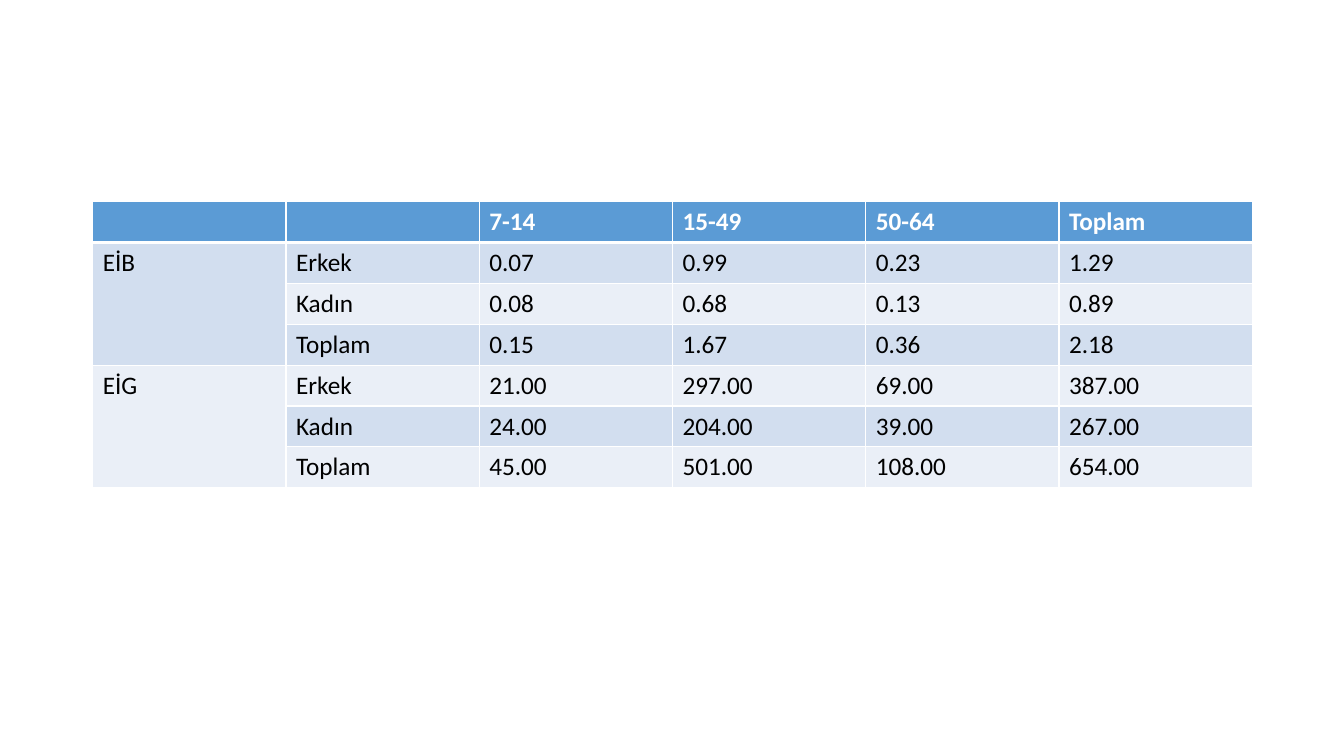
from dataclasses import dataclass

from lxml import etree
from pptx import Presentation
from pptx.dml.color import RGBColor
from pptx.oxml.ns import qn
from pptx.table import Table, _Cell
from pptx.util import Inches, Pt

COLORS = {
    "header": "5B9BD5",
    "dark_band": "D2DEEF",
    "light_band": "EAEFF7",
    "white": "FFFFFF",
    "black": "000000",
}
BLANK_LAYOUT = 6
THIN, THICK = 1, 3
HEADINGS = ("", "", "7-14", "15-49", "50-64", "Toplam")


@dataclass(frozen=True)
class Measure:
    name: str
    rows: tuple[tuple[str, ...], ...]


MEASURES = (
    Measure("EİB", (
        ("Erkek", "0.07", "0.99", "0.23", "1.29"),
        ("Kadın", "0.08", "0.68", "0.13", "0.89"),
        ("Toplam", "0.15", "1.67", "0.36", "2.18"),
    )),
    Measure("EİG", (
        ("Erkek", "21.00", "297.00", "69.00", "387.00"),
        ("Kadın", "24.00", "204.00", "39.00", "267.00"),
        ("Toplam", "45.00", "501.00", "108.00", "654.00"),
    )),
)


def write_text(cell: _Cell, text: str, *, color: str = "black",
               bold: bool = False, size: float = 18) -> None:
    paragraph = cell.text_frame.paragraphs[0]
    if not text:
        paragraph.font.size = Pt(size)
        return
    run = paragraph.add_run()
    run.text = text
    run.font.name = "Calibri"
    run.font.size = Pt(size)
    run.font.bold = bold
    run.font.color.rgb = RGBColor.from_string(COLORS[color])


def set_borders(cell: _Cell, top: float, bottom: float) -> None:
    """Add white borders; call before the fill, which must follow them in the XML."""
    properties = cell._tc.get_or_add_tcPr()
    widths = {"a:lnL": THIN, "a:lnR": THIN, "a:lnT": top, "a:lnB": bottom}
    for tag, width in widths.items():
        line = etree.SubElement(properties, qn(tag), w=str(int(Pt(width))))
        fill = etree.SubElement(line, qn("a:solidFill"))
        etree.SubElement(fill, qn("a:srgbClr"), val=COLORS["white"])


def fill_row(table: Table, row: int, texts: tuple[str, ...]) -> None:
    is_header = row == 0
    band = "header" if is_header else "dark_band" if row % 2 else "light_band"
    for column, text in enumerate(texts):
        cell = table.cell(row, column)
        set_borders(cell, top=THICK if row == 1 else THIN,
                    bottom=THICK if is_header else THIN)
        cell.fill.solid()
        cell.fill.fore_color.rgb = RGBColor.from_string(COLORS[band])
        write_text(cell, text, color="white" if is_header else "black", bold=is_header)


def main() -> None:
    presentation = Presentation()
    presentation.slide_width = Inches(13.33)
    presentation.slide_height = Inches(7.5)
    slide = presentation.slides.add_slide(presentation.slide_layouts[BLANK_LAYOUT])

    row_count = 1 + sum(len(measure.rows) for measure in MEASURES)
    table = slide.shapes.add_table(
        row_count, len(HEADINGS), Inches(0.92), Inches(2), Inches(11.5), Inches(2.84)
    ).table
    fill_row(table, 0, HEADINGS)

    row = 1
    for measure in MEASURES:
        first = row
        for values in measure.rows:
            name = measure.name if row == first else ""
            fill_row(table, row, (name, *values))
            row += 1
        table.cell(first, 0).merge(table.cell(row - 1, 0))

    presentation.save("out.pptx")


if __name__ == "__main__":
    main()
